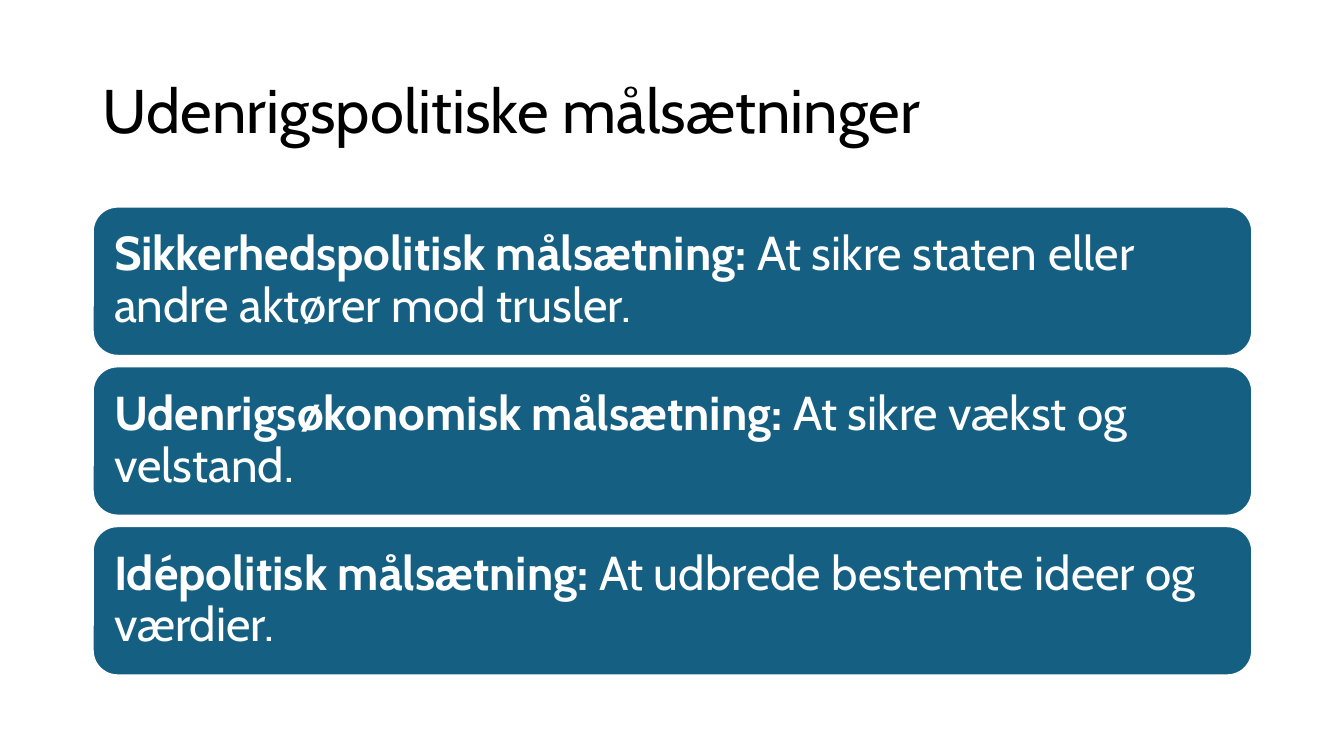
from dataclasses import dataclass

from pptx import Presentation
from pptx.dml.color import RGBColor
from pptx.enum.shapes import MSO_SHAPE as Shape
from pptx.enum.text import MSO_ANCHOR as Anchor, PP_ALIGN as Align
from pptx.text.text import TextFrame, _Paragraph as Paragraph
from pptx.util import Inches, Pt

FONT = "Cabin"
BLACK, WHITE, BLUE = "000000", "FFFFFF", "156082"
LEFT, WIDTH = 0.92, 11.5
GOAL_TOP, GOAL_HEIGHT, GOAL_STEP = 2.05, 1.48, 1.585


@dataclass
class Goal:
    name: str
    aim: str


GOALS = [
    Goal("Sikkerhedspolitisk målsætning: ", "At sikre staten eller andre aktører mod trusler."),
    Goal("Udenrigsøkonomisk målsætning: ", "At sikre vækst og velstand."),
    Goal("Idépolitisk målsætning: ", "At udbrede bestemte ideer og værdier."),
]


def rgb(color: str) -> RGBColor:
    return RGBColor.from_string(color)


def start_text(tf: TextFrame) -> Paragraph:
    tf.word_wrap = True
    tf.vertical_anchor = Anchor.MIDDLE
    p = tf.paragraphs[0]
    p.alignment = Align.LEFT
    p.line_spacing = 0.9
    return p


def add_run(p: Paragraph, text: str, size: int, color: str, bold: bool = False) -> None:
    r = p.add_run()
    r.text = text
    r.font.name = FONT
    r.font.size = Pt(size)
    r.font.bold = bold
    r.font.color.rgb = rgb(color)


def add_title(s, text: str) -> None:
    sp = s.shapes.title
    sp.left, sp.top = Inches(LEFT), Inches(0.4)
    sp.width, sp.height = Inches(WIDTH), Inches(1.45)
    add_run(start_text(sp.text_frame), text, 44, BLACK)


def add_goal(s, goal: Goal, top: float) -> None:
    sp = s.shapes.add_shape(
        Shape.ROUNDED_RECTANGLE, Inches(LEFT), Inches(top), Inches(WIDTH), Inches(GOAL_HEIGHT)
    )
    sp.shadow.inherit = False
    sp.fill.solid()
    sp.fill.fore_color.rgb = rgb(BLUE)
    sp.line.color.rgb = rgb(WHITE)
    sp.line.width = Pt(1.5)
    tf = sp.text_frame
    tf.margin_left = tf.margin_right = tf.margin_top = tf.margin_bottom = Inches(0.14)
    p = start_text(tf)
    add_run(p, goal.name, 34, WHITE, bold=True)
    add_run(p, goal.aim, 34, WHITE)


def main() -> None:
    prs = Presentation()
    prs.slide_width, prs.slide_height = Inches(13.33), Inches(7.5)
    title_only = prs.slide_layouts.get_by_name("Title Only")
    s = prs.slides.add_slide(title_only)
    add_title(s, "Udenrigspolitiske målsætninger")
    for i, goal in enumerate(GOALS):
        add_goal(s, goal, GOAL_TOP + i * GOAL_STEP)
    prs.save("out.pptx")


if __name__ == "__main__":
    main()
